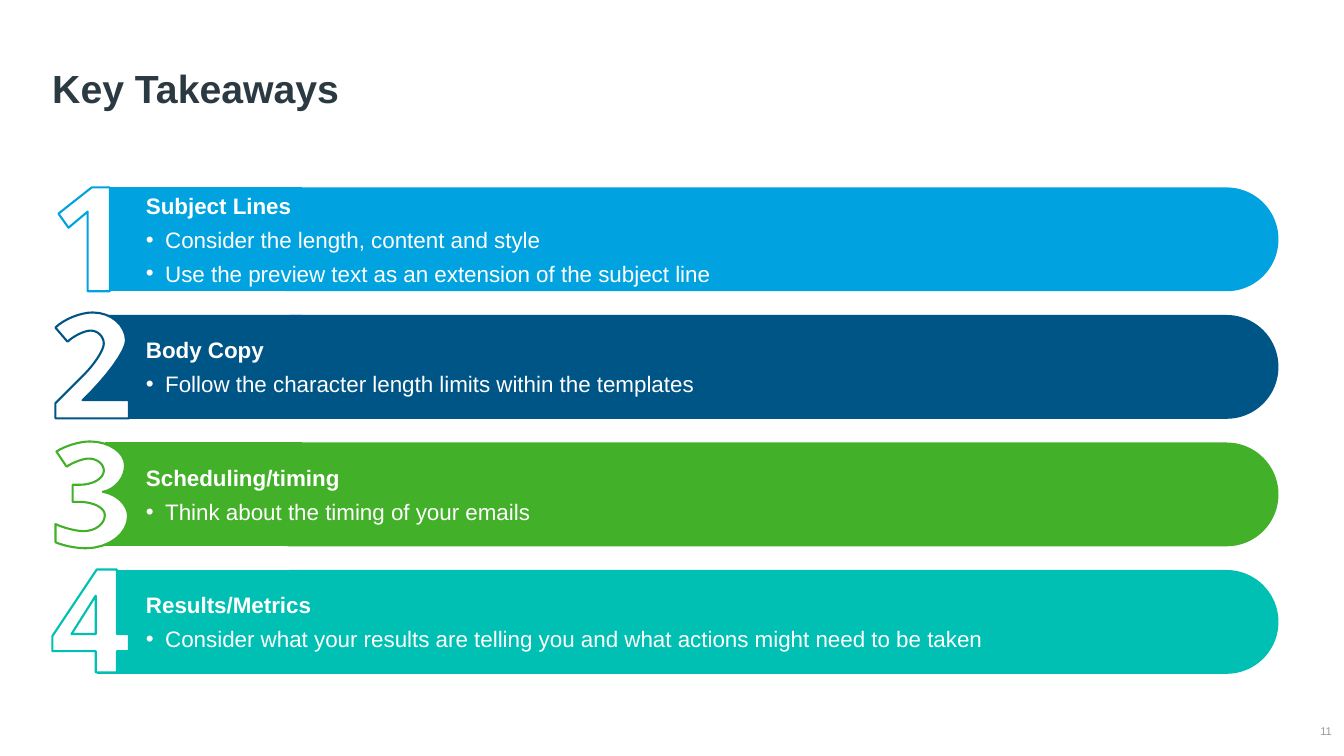
from lxml import etree
from pptx import Presentation
from pptx import util as u
from pptx.dml.color import RGBColor
from pptx.enum import shapes, text
from pptx.oxml.ns import qn

TITLE = "Key Takeaways"
PAGE = "11"
TAKEAWAYS = [
    ("Subject Lines", ["Consider the length, content and style",
                       "Use the preview text as an extension of the subject line"], "00A3E0"),
    ("Body Copy", ["Follow the character length limits within the templates"], "005587"),
    ("Scheduling/timing", ["Think about the timing of your emails"], "43B02A"),
    ("Results/Metrics", ["Consider what your results are telling you and what actions "
                         "might need to be taken"], "00BFB3"),
]

# Two numbers end a straight line; four give the corner and end of a rounded one.
DIGITS = [
    [[(1.09, 2.89), (0.87, 2.89), (0.87, 2.1), (0.68, 2.26), (0.58, 2.12),
      (0.91, 1.86), (1.09, 1.86)]],
    [[(1.28, 4.15), (0.55, 4.15), (0.55, 4), (0.81, 3.74), (1.03, 3.53, 1.03, 3.41),
      (1.03, 3.28, 0.9, 3.28), (0.79, 3.28, 0.67, 3.39), (0.55, 3.25),
      (0.7, 3.1, 0.92, 3.1), (1.25, 3.1, 1.25, 3.38), (1.25, 3.56, 0.82, 3.97),
      (1.28, 3.97)]],
    [[(1.24, 4.62), (1.24, 4.84, 1.02, 4.88), (1.27, 4.92, 1.27, 5.12),
      (1.27, 5.44, 0.85, 5.44), (0.68, 5.44, 0.55, 5.38), (0.55, 5.2),
      (0.7, 5.27, 0.83, 5.27), (1.04, 5.27, 1.04, 5.11), (1.04, 4.98, 0.79, 4.98),
      (0.72, 4.98), (0.72, 4.81), (0.79, 4.81), (1.03, 4.81, 1.03, 4.67),
      (1.03, 4.55, 0.88, 4.55), (0.78, 4.55, 0.66, 4.63), (0.56, 4.48),
      (0.71, 4.38, 0.89, 4.38), (1.24, 4.38, 1.24, 4.62)]],
    [[(1.28, 6.46), (1.16, 6.46), (1.16, 6.67), (0.95, 6.67), (0.95, 6.46), (0.52, 6.46),
      (0.52, 6.31), (0.96, 5.65), (1.16, 5.65), (1.16, 6.29), (1.28, 6.29)],
     [(0.95, 6.29), (0.95, 5.91), (0.71, 6.29)]],
]
TAIL_EDGES = [(0.93, 0.93), (1.04, 1.1, 0.8, 0.8), (1.04, 1.04), (0.96, 0.96)]
TOP, PITCH, HEIGHT = 1.86, 1.265, 1.03
BAR_LEFT, BAR_WIDTH, TAIL_RIGHT = 2.36, 10.32, 3
CURVE_STEPS, ROUNDNESS = 8, 0.55

prs = Presentation()
prs.slide_width, prs.slide_height = u.Inches(13.33), u.Inches(7.5)
slide = prs.slides.add_slide(prs.slide_layouts[6])


def color(value):
    return RGBColor.from_string(value)


def paint(sp, fill, line=None):
    sp.shadow.inherit = False
    sp.fill.solid()
    sp.fill.fore_color.rgb = color(fill)
    if line:
        sp.line.color.rgb = color(line)
        sp.line.width = u.Pt(1.5)
    else:
        sp.line.fill.background()


def rounded(start, corner, end):
    ctrl = [start] + [tuple(a + ROUNDNESS * (c - a) for a, c in zip(p, corner))
                      for p in (start, end)] + [end]
    for step in range(1, CURVE_STEPS + 1):
        t = step / CURVE_STEPS
        w = ((1 - t) ** 3, 3 * t * (1 - t) ** 2, 3 * t * t * (1 - t), t ** 3)
        yield tuple(sum(k * c[axis] for k, c in zip(w, ctrl)) for axis in (0, 1))


def flatten(contour):
    points = [contour[0]]
    for seg in contour[1:]:
        points += [seg] if len(seg) == 2 else list(rounded(points[-1], seg[:2], seg[2:]))
    return [(u.Inches(x), u.Inches(y)) for x, y in points]


def add_outline(contours, fill, line=None):
    first, *rest = [flatten(c) for c in contours]
    fb = slide.shapes.build_freeform(*first[0])
    fb.add_line_segments(first[1:])
    for points in rest:
        fb.move_to(*points[0])
        fb.add_line_segments(points[1:])
    paint(fb.convert_to_shape(), fill, line)


def add_text(box, paragraphs, anchor=text.MSO_ANCHOR.MIDDLE, inset=None):
    tf = slide.shapes.add_textbox(*map(u.Inches, box)).text_frame
    tf.word_wrap = True
    tf.vertical_anchor = anchor
    if inset is not None:
        for side in ("left", "right", "top", "bottom"):
            setattr(tf, f"margin_{side}", u.Inches(inset))
    for i, (words, size, hue, bold, fmt, bullet) in enumerate(paragraphs):
        p = tf.paragraphs[0] if i == 0 else tf.add_paragraph()
        for name, value in fmt.items():
            setattr(p, name, value)
        if bullet:
            pPr = p._p.get_or_add_pPr()
            pPr.set("marL", str(u.Inches(0.19)))
            pPr.set("indent", str(-u.Inches(0.19)))
            etree.SubElement(pPr, qn("a:buFont")).set("typeface", "Arial")
            etree.SubElement(pPr, qn("a:buChar")).set("char", "•")
        r = p.add_run()
        r.text = words
        for name, value in {"name": "Arial", "size": u.Pt(size), "bold": bold}.items():
            setattr(r.font, name, value)
        r.font.color.rgb = color(hue)


add_text((12.82, 7.16, 0.39, 0.19),
         [(PAGE, 8, "959CA0", False, {"alignment": text.PP_ALIGN.RIGHT}, False)], inset=0)
add_text((0.42, 0.32, 12.4, 0.84),
         [(TITLE, 28, "2B3A42", True, {"line_spacing": 0.9}, False)], text.MSO_ANCHOR.BOTTOM)

for i, (heading, points, hue) in enumerate(TAKEAWAYS):
    top = TOP + i * PITCH
    edge = TAIL_EDGES[i]
    left_side = [(x, top + HEIGHT * n / (len(edge) - 1)) for n, x in enumerate(edge)]
    add_outline([left_side + [(TAIL_RIGHT, top + HEIGHT), (TAIL_RIGHT, top)]], hue)
    bar = slide.shapes.add_shape(shapes.MSO_SHAPE.ROUNDED_RECTANGLE,
                                 *map(u.Inches, (BAR_LEFT, top, BAR_WIDTH, HEIGHT)))
    bar.adjustments[0] = 0.5
    paint(bar, hue)
    add_text((1.35, top + 0.06, 11.27, 0.91),
             [(heading, 16, "FFFFFF", True, {}, False)]
             + [(s, 16, "FFFFFF", False, {"space_before": u.Pt(5)}, True) for s in points])
    add_outline(DIGITS[i], "FFFFFF", hue)

prs.save("out.pptx")
